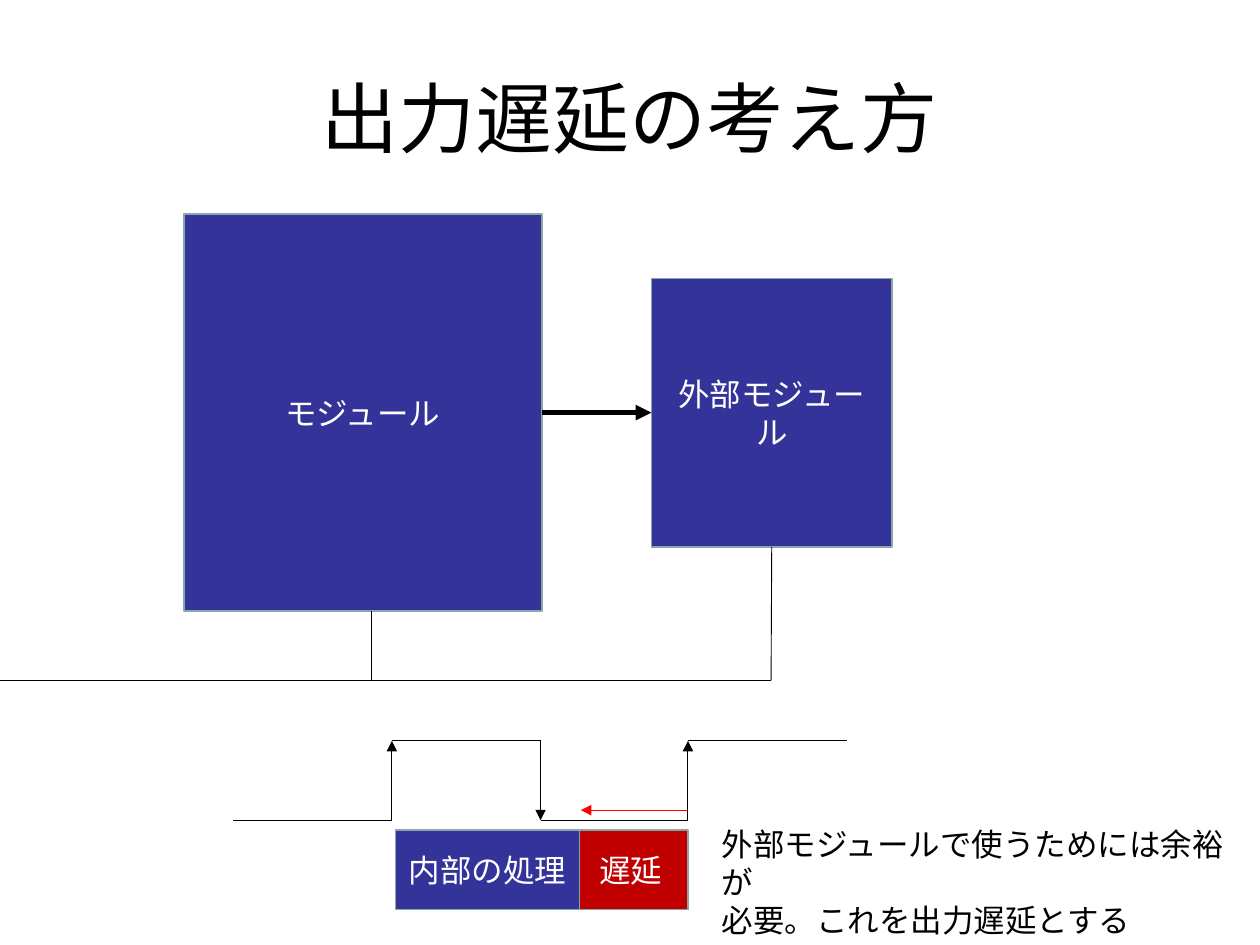
from dataclasses import dataclass
from typing import Optional

from lxml import etree
from pptx import Presentation, util as u
from pptx.dml.color import RGBColor
from pptx.enum import shapes, text
from pptx.oxml.ns import qn

BLACK = RGBColor(0x00, 0x00, 0x00)
WHITE = RGBColor(0xFF, 0xFF, 0xFF)
RED = RGBColor(0xFF, 0x00, 0x00)
DARK_RED = RGBColor(0xC0, 0x00, 0x00)
NAVY = RGBColor(0x33, 0x33, 0x99)
BORDER = RGBColor(0x8A, 0xA6, 0xA8)
FONT = "Arial"


@dataclass
class Block:
    label: str
    left: float
    top: float
    width: float
    height: float
    fill: RGBColor = NAVY


@dataclass
class Line:
    start: tuple[float, float]
    end: tuple[float, float]
    arrow: bool = False
    color: RGBColor = BLACK
    weight: float = 0.5


def add_text(paragraph, content: str, size: float, color: RGBColor) -> None:
    run = paragraph.add_run()
    run.text = content
    run.font.size = u.Pt(size)
    run.font.name = FONT
    run.font.color.rgb = color


def draw_block(slide, block: Block):
    shape = slide.shapes.add_shape(
        shapes.MSO_SHAPE.RECTANGLE,
        *map(u.Inches, (block.left, block.top, block.width, block.height)))
    shape.shadow.inherit = False
    shape.fill.solid()
    shape.fill.fore_color.rgb = block.fill
    shape.line.color.rgb = BORDER
    shape.line.width = u.Pt(1)
    frame = shape.text_frame
    frame.word_wrap = True
    frame.vertical_anchor = text.MSO_ANCHOR.MIDDLE
    frame.paragraphs[0].alignment = text.PP_ALIGN.CENTER
    add_text(frame.paragraphs[0], block.label, 18, WHITE)
    return shape


def draw_line(slide, line: Line, source: Optional[tuple] = None,
              target: Optional[tuple] = None) -> None:
    connector = slide.shapes.add_connector(
        shapes.MSO_CONNECTOR.STRAIGHT,
        *map(u.Inches, (*line.start, *line.end)))
    if source:
        connector.begin_connect(*source)
    if target:
        connector.end_connect(*target)
    connector.line.color.rgb = line.color
    connector.line.width = u.Pt(line.weight)
    if line.arrow:
        etree.SubElement(connector.line._get_or_add_ln(), qn("a:tailEnd"), type="triangle")
    etree.SubElement(connector._element.spPr, qn("a:effectLst"))


def draw_text_box(slide, box: tuple, lines: list[str], size: float,
                  alignment=text.PP_ALIGN.LEFT, anchor=text.MSO_ANCHOR.TOP) -> None:
    frame = slide.shapes.add_textbox(*map(u.Inches, box)).text_frame
    frame.word_wrap = True
    frame.vertical_anchor = anchor
    for index, content in enumerate(lines):
        paragraph = frame.add_paragraph() if index else frame.paragraphs[0]
        paragraph.alignment = alignment
        add_text(paragraph, content, size, BLACK)


def main() -> None:
    presentation = Presentation()
    presentation.slide_width = u.Inches(10)
    presentation.slide_height = u.Inches(7.5)
    slide = presentation.slides.add_slide(presentation.slide_layouts[6])

    # Title
    draw_text_box(slide, (0.5, 0.3, 9, 1.25), ["出力遅延の考え方"], 44,
                  text.PP_ALIGN.CENTER, text.MSO_ANCHOR.MIDDLE)

    # Modules and the signal between them
    module = draw_block(slide, Block("モジュール", 1.46, 1.7, 2.84, 3.15))
    external = draw_block(slide, Block("外部モジュール", 5.17, 2.21, 1.91, 2.13))
    draw_line(slide, Line((4.3, 3.28), (5.17, 3.28), arrow=True, weight=3),
              source=(module, 3), target=(external, 1))

    # Shared clock line with its two branches
    clock_y = 5.4
    draw_line(slide, Line((0, clock_y), (6.12, clock_y)))
    draw_line(slide, Line((2.95, clock_y), (2.95, 4.85)))
    draw_line(slide, Line((6.12, clock_y), (6.12, 4.34)), target=(external, 2))

    # Processing time and delay within the clock cycle
    draw_block(slide, Block("遅延", 4.55, 6.59, 0.91, 0.63, DARK_RED))
    draw_block(slide, Block("内部の処理", 3.14, 6.59, 1.46, 0.63))

    # Clock waveform: every vertical edge carries an arrowhead
    low, high = 6.51, 5.88
    wave = [(1.85, low), (3.11, low), (3.11, high), (4.29, high),
            (4.29, low), (5.46, low), (5.46, high), (6.72, high)]
    for start, end in zip(wave, wave[1:]):
        draw_line(slide, Line(start, end, arrow=start[0] == end[0]))

    # Explanation and the margin it refers to
    draw_text_box(slide, (5.63, 6.5, 4.25, 0.71),
                  ["外部モジュールで使うためには余裕が", "必要。これを出力遅延とする"], 18)
    draw_line(slide, Line((5.45, 6.43), (4.61, 6.43), arrow=True, color=RED))

    presentation.save("out.pptx")


if __name__ == "__main__":
    main()
